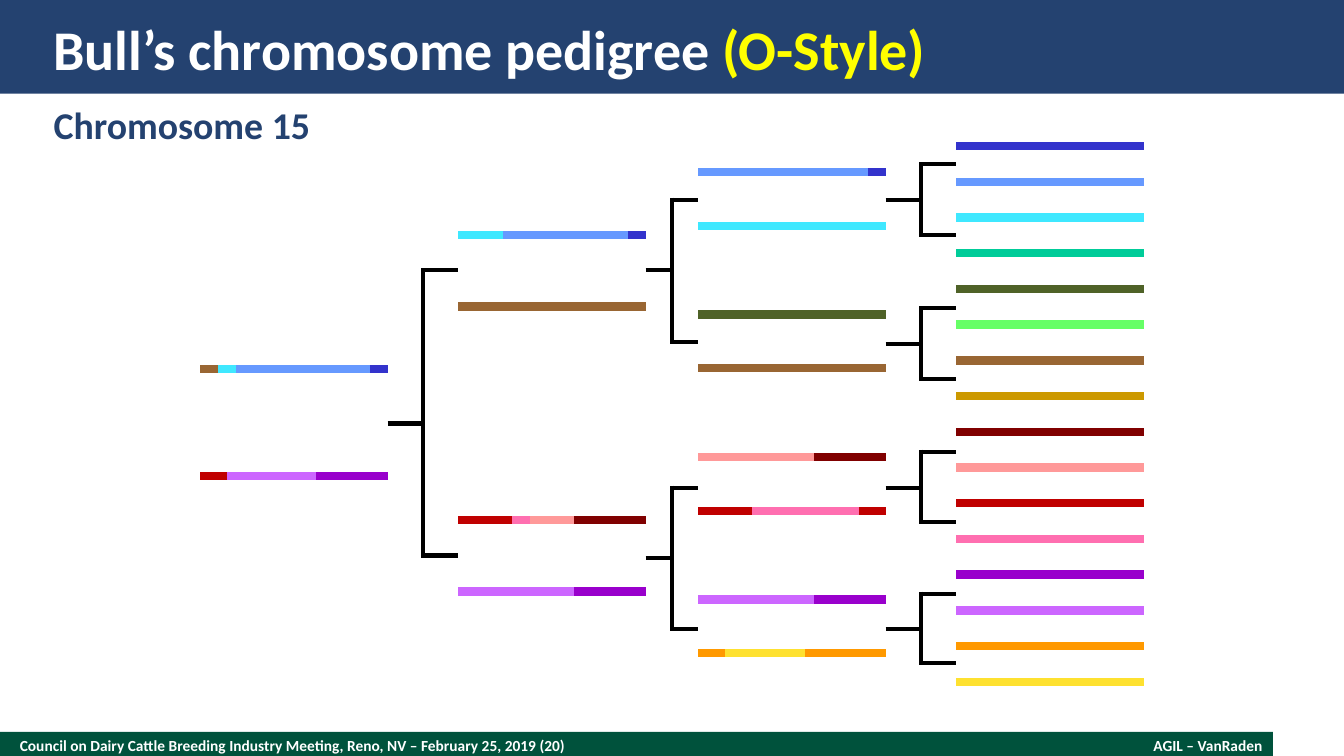
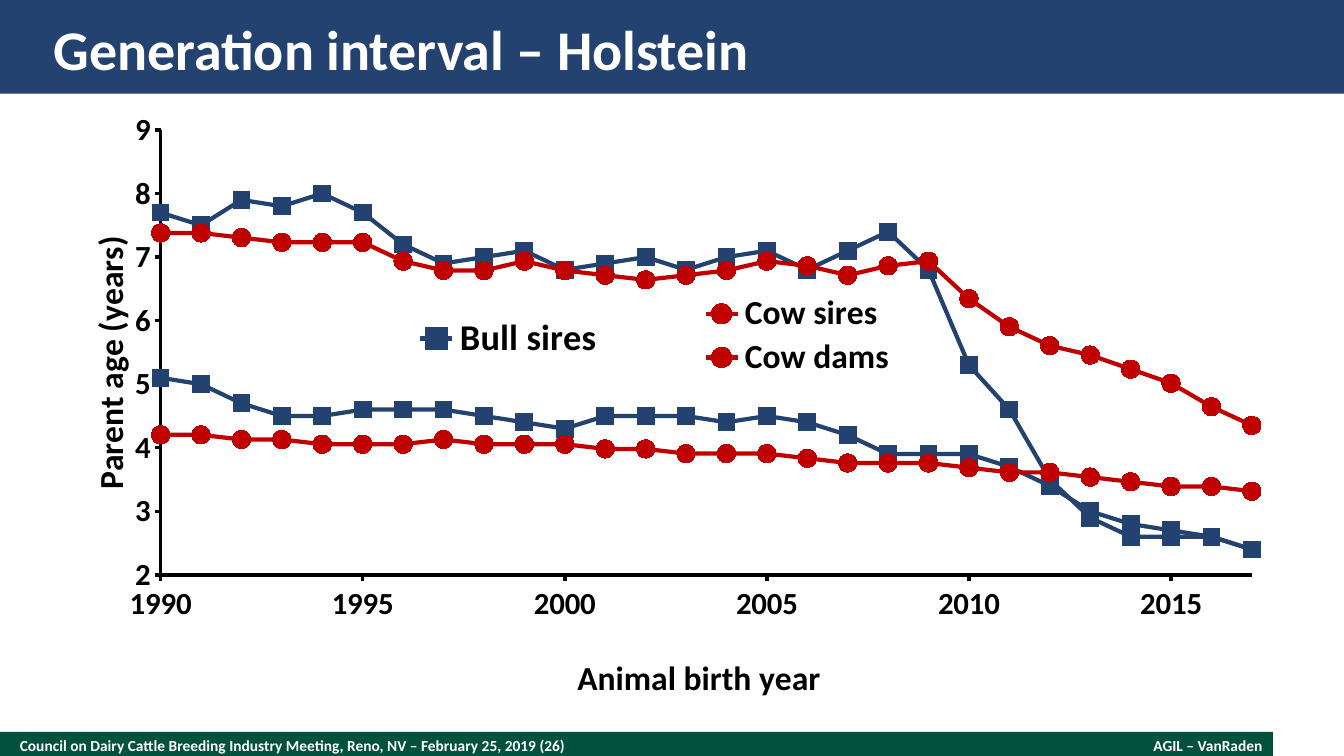
from pptx import Presentation
from pptx import util as u
from pptx.chart import data as chart_data
from pptx.dml import color as c
from pptx.enum import chart as ch, shapes, text
from pptx.oxml import parse_xml
from pptx.oxml.ns import nsdecls, qn

FONT = "Calibri"
BLUE, GREEN, WHITE, BLACK = "244270", "00523C", "FFFFFF", "000000"
YELLOW, RED = "FFFF00", "C00000"
rgb = c.RGBColor.from_string


def add_label(slide, words, box, size, color, align=text.PP_ALIGN.LEFT):
    label = slide.shapes.add_textbox(*map(u.Cm, box))
    frame = label.text_frame
    frame.word_wrap = True
    frame.margin_left = frame.margin_right = frame.margin_top = frame.margin_bottom = 0
    frame.vertical_anchor = text.MSO_ANCHOR.MIDDLE
    paragraph = frame.paragraphs[0]
    paragraph.text = words
    paragraph.alignment = align
    paragraph.font.name, paragraph.font.size, paragraph.font.bold = FONT, u.Pt(size), True
    paragraph.font.color.rgb = rgb(color)
    return label


def set_layout(part, index, target="", **fractions):
    """Place a chart part by fractions of the chart; index is where its layout element goes."""
    old = part.find(qn("c:layout"))
    if old is not None:
        part.remove(old)
    inner = f'<c:layoutTarget val="{target}"/>' if target else ""
    modes = "".join(f'<c:{key}Mode val="edge"/>' for key in "xy")
    values = "".join(f'<c:{key} val="{value}"/>' for key, value in fractions.items())
    part.insert(index, parse_xml(
        f'<c:layout {nsdecls("c")}><c:manualLayout>{inner}{modes}{values}'
        "</c:manualLayout></c:layout>"))


presentation = Presentation()
presentation.slide_width, presentation.slide_height = u.Cm(33.87), u.Cm(19.05)
layout = presentation.slide_layouts[5]

# Titles and footers
pages = [
    (20, [("Bull’s chromosome pedigree ", WHITE), ("(O-Style)", YELLOW)]),
    (26, [("Generation interval – Holstein", WHITE)]),
]
for number, title_runs in pages:
    slide = presentation.slides.add_slide(layout)
    title = slide.shapes.title
    title.left, title.top, title.width, title.height = map(u.Cm, (1.35, 0.33, 31.17, 1.78))
    frame = title.text_frame
    frame.margin_left = frame.margin_right = frame.margin_top = frame.margin_bottom = 0
    frame.vertical_anchor = text.MSO_ANCHOR.MIDDLE
    frame.auto_size = text.MSO_AUTO_SIZE.NONE
    paragraph = frame.paragraphs[0]
    paragraph.alignment = text.PP_ALIGN.LEFT
    paragraph.font.name, paragraph.font.size, paragraph.font.bold = FONT, u.Pt(40), True
    for words, color in title_runs:
        run = paragraph.add_run()
        run.text = words
        run.font.color.rgb = rgb(color)
    add_label(slide, "Council on Dairy Cattle Breeding Industry Meeting, Reno, NV – "
              f"February 25, 2019 ({number})", (0.5, 18.44, 22, 0.68), 11, WHITE)

pedigree_slide, interval_slide = presentation.slides

# Bands and the author are drawn once, then moved to the layout
shared = []
for box, color in [((0, 18.44, 32.08, 0.61), GREEN), ((0, 0, 33.87, 2.36), BLUE)]:
    band = pedigree_slide.shapes.add_shape(shapes.MSO_SHAPE.RECTANGLE, *map(u.Cm, box))
    band.shadow.inherit = False
    band.fill.solid()
    band.fill.fore_color.rgb = rgb(color)
    band.line.fill.background()
    shared.append(band)
shared.append(add_label(pedigree_slide, "AGIL – VanRaden", (24.38, 18.54, 7.44, 0.48),
                        11, WHITE, text.PP_ALIGN.RIGHT))
for position, shape in enumerate(shared, start=2):
    layout.shapes._spTree.insert(position, shape._element)

# Slide 1: chromosome pedigree
add_label(pedigree_slide, "Chromosome 15", (1.35, 2.54, 16.94, 1.19), 27, BLUE)

NAVY, SKY, CYAN, OLIVE, BROWN = "3333CC", "6699FF", "3FE8FF", "4F6228", "996633"
MAROON, SALMON, PINK = "800000", "FF9999", "FF6FB0"
PURPLE, VIOLET, ORANGE, LEMON = "9900CC", "CC66FF", "FF9900", "FEE130"
BAR_UNITS = 21
BAR_WIDTH = 4.72
founders = [NAVY, SKY, CYAN, "00CC99", OLIVE, "66FF66", BROWN, "CC9900",
            MAROON, SALMON, RED, PINK, PURPLE, VIOLET, ORANGE, LEMON]
# Left edge, first bar, distance between pairs, gap in a pair, segments of each bar
generations = [
    (5.05, 9.3, 0, 2.69, [
        [(BROWN, 2), (CYAN, 2), (SKY, 15), (NAVY, 2)],
        [(RED, 3), (VIOLET, 10), (PURPLE, 8)]]),
    (11.55, 5.92, 7.18, 1.8, [
        [(CYAN, 5), (SKY, 14), (NAVY, 2)],
        [(BROWN, 21)],
        [(RED, 6), (PINK, 2), (SALMON, 5), (MAROON, 8)],
        [(VIOLET, 13), (PURPLE, 8)]]),
    (17.6, 4.34, 3.59, 1.35, [
        [(SKY, 19), (NAVY, 2)],
        [(CYAN, 21)],
        [(OLIVE, 21)],
        [(BROWN, 21)],
        [(SALMON, 13), (MAROON, 8)],
        [(RED, 6), (PINK, 12), (RED, 3)],
        [(VIOLET, 13), (PURPLE, 8)],
        [(ORANGE, 3), (LEMON, 9), (ORANGE, 9)]]),
    (24.1, 3.68, 1.8, 0.9, [[(color, BAR_UNITS)] for color in founders]),
]
# Top, stem and bottom of each bracket to the right of a generation
brackets = [
    [(6.81, 10.67, 14)],
    [(5.03, 6.81, 8.61), (12.29, 14.07, 15.85)],
    [(4.14, 5.03, 5.92), (7.77, 8.66, 9.55), (11.38, 12.29, 13.16), (14.96, 15.85, 16.71)],
]
lines = []
for left, first, pair_step, gap, bars in generations:
    for index, segments in enumerate(bars):
        pair, member = divmod(index, 2)
        y = first + pair * pair_step + member * gap
        x = left
        for color, units in segments:
            end = x + units * BAR_WIDTH / BAR_UNITS
            lines.append((x, y, end, y, color, 6))
            x = end
for generation, following, group in zip(generations, generations[1:], brackets):
    start, end = generation[0] + BAR_WIDTH, following[0]
    spine = (start + end) / 2
    for top, stem, bottom in group:
        lines += [
            (start, stem, spine, stem, BLACK, 3),
            (spine, top - 0.05, spine, bottom + 0.05, BLACK, 3),
            (spine, top, end, top, BLACK, 3),
            (spine, bottom, end, bottom, BLACK, 3),
        ]
for *ends, color, width in lines:
    line = pedigree_slide.shapes.add_connector(
        shapes.MSO_CONNECTOR.STRAIGHT, *map(u.Cm, ends))
    line.line.color.rgb = rgb(color)
    line.line.width = u.Pt(width)
    line._element.spPr.append(parse_xml(f'<a:effectLst {nsdecls("a")}/>'))

# Slide 2: parent ages, with bulls in years and cows on a hidden scale
years = range(1990, 2018)
bulls = {
    "Bull sires": [7.7, 7.5, 7.9, 7.8, 8, 7.7, 7.2, 6.9, 7, 7.1, 6.8, 6.9, 7, 6.8,
                   7, 7.1, 6.8, 7.1, 7.4, 6.8, 5.3, 4.6, 3.5, 2.9, 2.6, 2.6, 2.6, 2.4],
    "Bull dams": [5.1, 5, 4.7, 4.5, 4.5, 4.6, 4.6, 4.6, 4.5, 4.4, 4.3, 4.5, 4.5, 4.5,
                  4.4, 4.5, 4.4, 4.2, 3.9, 3.9, 3.9, 3.7, 3.4, 3, 2.8, 2.7, 2.6, 2.4],
}
cows = {
    "Cow sires": [100, 100, 99, 98, 98, 98, 94, 92, 92, 94, 92, 91, 90, 91,
                  92, 94, 93, 91, 93, 94, 86, 80, 76, 74, 71, 68, 63, 59],
    "Cow dams": [57, 57, 56, 56, 55, 55, 55, 56, 55, 55, 55, 54, 54, 53,
                 53, 53, 52, 51, 51, 51, 50, 49, 49, 48, 47, 46, 46, 45],
}
SQUARE, CIRCLE = ch.XL_MARKER_STYLE.SQUARE, ch.XL_MARKER_STYLE.CIRCLE
charts = [
    (bulls, BLUE, SQUARE, 12, (2, 9), 26, dict(x=0.26, y=0.34, w=0.2, h=0.08)),
    (cows, RED, CIRCLE, 13, (27, 122), 24, dict(x=0.49, y=0.3, w=0.2, h=0.15)),
]
for ages, color, marker, marker_size, scale, legend_size, legend_place in charts:
    data = chart_data.XyChartData()
    for name, values in ages.items():
        points = data.add_series(name)
        for year, value in zip(years, values):
            points.add_data_point(year, value)
    chart = interval_slide.shapes.add_chart(
        ch.XL_CHART_TYPE.XY_SCATTER_LINES, *map(u.Cm, (1.42, 2.8, 31.65, 15.09)), data).chart
    chart.has_title = False
    chart.font.name, chart.font.size, chart.font.bold = FONT, u.Pt(24), True
    chart.font.color.rgb = rgb(BLACK)
    chart.plots[0].vary_by_categories = False
    for series in chart.plots[0].series:
        series.smooth = False
        series.format.line.color.rgb = rgb(color)
        series.format.line.width = u.Pt(3)
        series.marker.style, series.marker.size = marker, marker_size
        series.marker.format.fill.solid()
        series.marker.format.fill.fore_color.rgb = rgb(color)
        series.marker.format.line.color.rgb = rgb(color)

    chart.has_legend = True
    legend = chart.legend
    legend.position = ch.XL_LEGEND_POSITION.RIGHT
    legend.include_in_layout = False
    legend.font.name, legend.font.size, legend.font.bold = FONT, u.Pt(legend_size), True
    set_layout(legend._element, 1, **legend_place)
    if ages is bulls:
        legend._element.insert(1, parse_xml(
            f'<c:legendEntry {nsdecls("c")}><c:idx val="1"/><c:delete val="1"/></c:legendEntry>'))

    for axis, limits, step, words, place in [
        (chart.category_axis, (1990, 2017), 5, "Animal birth year", dict(x=0.41, y=0.9)),
        (chart.value_axis, scale, 1, "Parent age (years)", dict(x=0.02, y=0.2)),
    ]:
        axis.minimum_scale, axis.maximum_scale = limits
        axis.has_major_gridlines = False
        axis.visible = ages is bulls
        if not axis.visible:
            continue
        axis.major_unit = step
        axis.major_tick_mark = ch.XL_TICK_MARK.OUTSIDE
        axis.tick_labels.font.size, axis.tick_labels.font.bold = u.Pt(22), True
        axis.tick_labels.number_format = "0"
        axis.tick_labels.number_format_is_linked = False
        axis.format.line.color.rgb = rgb(BLACK)
        axis.format.line.width = u.Pt(2.5)
        paragraph = axis.axis_title.text_frame.paragraphs[0]
        paragraph.text = words
        paragraph.font.name, paragraph.font.size, paragraph.font.bold = FONT, u.Pt(24), True
        set_layout(axis.axis_title._element, 1, **place)

    # No background, so that both charts show
    chart_part = chart._chartSpace.find(qn("c:chart"))
    plot_area = chart_part.find(qn("c:plotArea"))
    set_layout(plot_area, 0, "inner", x=0.083, y=0.031, w=0.869, h=0.745)
    no_fill = (f'<c:spPr {nsdecls("c", "a")}><a:noFill/><a:ln><a:noFill/></a:ln></c:spPr>')
    plot_area.append(parse_xml(no_fill))
    chart_part.addnext(parse_xml(no_fill))

presentation.save("out.pptx")
